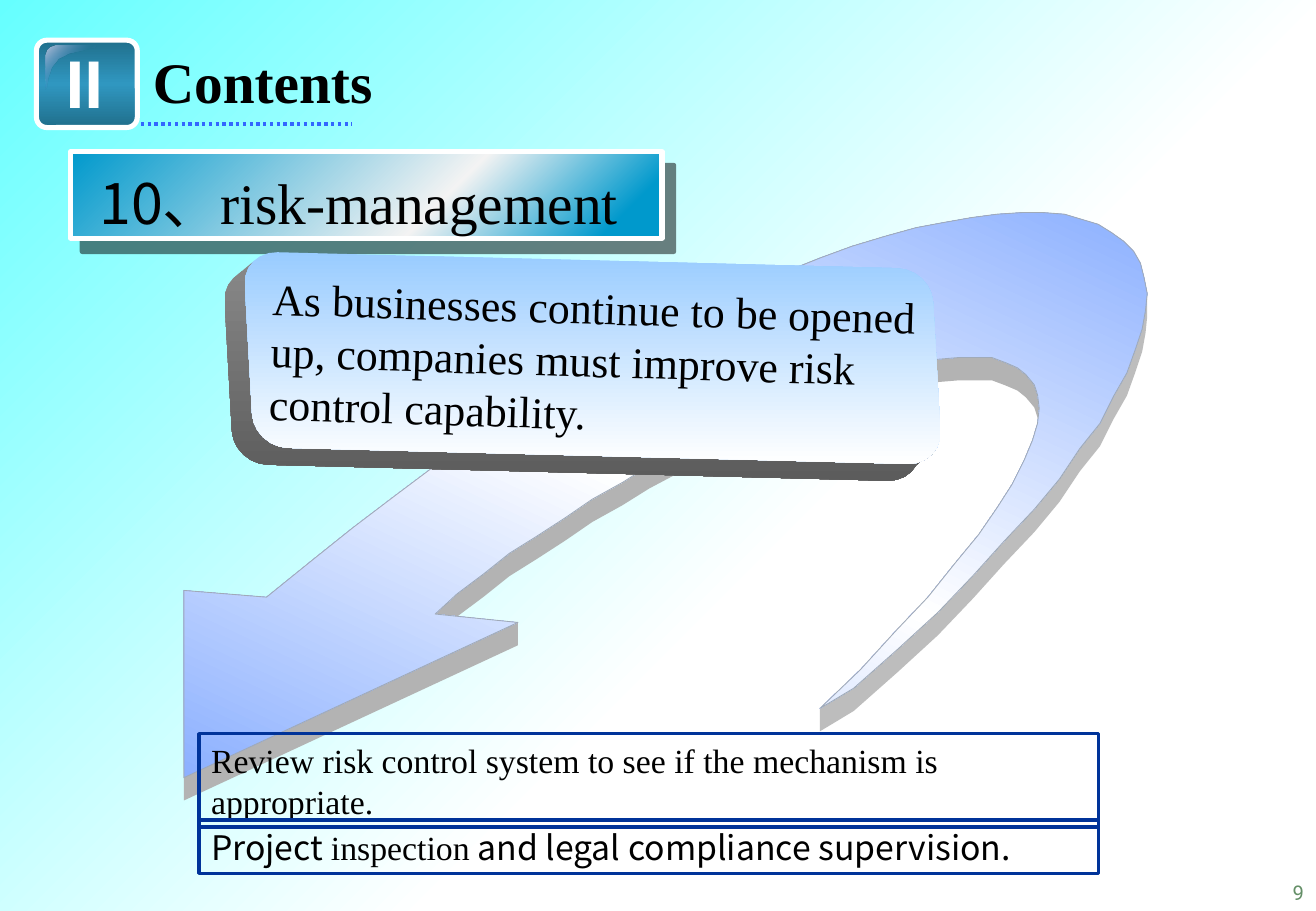
"""Build the risk-management contents slide."""
import math

import lxml.etree
import pptx
import pptx.dml.color
import pptx.enum.dml
import pptx.enum.shapes
import pptx.enum.text
import pptx.oxml.ns
import pptx.util

Pt = pptx.util.Pt
qn = pptx.oxml.ns.qn
SHAPE = pptx.enum.shapes.MSO_SHAPE
ALIGN = pptx.enum.text.PP_ALIGN
SERIF = "Times New Roman"
SANS = "Noto Sans CJK SC"

OUTER = [(486, 420), (506, 408), (532, 385), (556, 363), (577, 341), (595, 321), (613, 302),
         (628, 284), (640, 266), (652, 251), (660, 235), (668, 221), (673, 207), (677, 195),
         (679, 184), (680, 174)]
TOP = [(678, 164), (676, 156), (672, 149), (666, 143), (659, 138), (651, 133), (641, 130),
       (631, 127), (618, 126), (606, 126), (591, 127), (576, 129), (559, 132), (543, 135),
       (525, 140), (505, 146), (486, 153), (466, 161), (445, 169), (423, 179), (401, 190),
       (378, 202), (355, 215), (331, 229), (307, 243), (283, 259), (258, 276), (234, 294),
       (209, 313), (184, 333), (158, 354), (109, 350)]
HEAD = [(109, 461), (307, 369)]
INNER = [(258, 364), (271, 352), (287, 340), (302, 328), (318, 318), (335, 307), (351, 296),
         (369, 286), (385, 276), (402, 267), (420, 258), (436, 251), (454, 243), (469, 237),
         (485, 231), (501, 225), (516, 221), (530, 217), (544, 215), (556, 213), (568, 212),
         (578, 212), (588, 212), (596, 215), (603, 218), (608, 222), (613, 228), (615, 234),
         (616, 242)]
BACK = [(615, 251), (612, 261), (607, 273), (600, 287), (591, 301), (580, 317), (566, 334),
        (550, 354), (531, 374), (510, 397)]
GLOSS = [(33, 27), (30, 28), (28, 30), (27, 33), (27, 53), (28, 52), (29, 46), (31, 40),
         (35, 35), (41, 32), (50, 30), (56, 28.5), (57, 27)]


def rgb(value):
    return pptx.dml.color.RGBColor.from_string(value)


def rounded_card(left, top, across, down, ru, rv):
    points = []
    corners = [(1 - ru, 1 - rv), (ru, 1 - rv), (ru, rv), (1 - ru, rv)]
    for i, (cu, cv) in enumerate(corners):
        for step in range(7):
            a = math.radians(90 * i + 15 * step)
            u, v = cu + ru * math.cos(a), cv + rv * math.sin(a)
            points.append((left + u * across[0] + v * down[0],
                           top + u * across[1] + v * down[1]))
    return points


class Deck:
    def __init__(self, width, height):
        self.prs = pptx.Presentation()
        self.prs.slide_width, self.prs.slide_height = Pt(width), Pt(height)
        self.s = self.prs.slides.add_slide(self.prs.slide_layouts[6])

    def gradient(self, owner, stops, angle):
        owner_fill = self.s.background.fill if owner is self.s else owner.fill
        owner_fill.gradient()
        owner_fill.gradient_angle = (360 - angle) % 360
        gs_lst = owner.element.find(".//" + qn("a:gsLst"))
        for gs in list(gs_lst):
            gs_lst.remove(gs)
        for pos, color, *alpha in stops:
            gs = lxml.etree.SubElement(gs_lst, qn("a:gs"), pos=str(pos * 1000))
            clr = lxml.etree.SubElement(gs, qn("a:srgbClr"), val=color)
            for value in alpha:
                lxml.etree.SubElement(clr, qn("a:alpha"), val=str(value * 1000))

    def style(self, sp, fill, angle, line, weight):
        sp.shadow.inherit = False
        if isinstance(fill, list):
            self.gradient(sp, fill, angle)
        elif fill:
            sp.fill.solid()
            sp.fill.fore_color.rgb = rgb(fill)
        else:
            sp.fill.background()
        if line:
            sp.line.color.rgb = rgb(line)
            sp.line.width = Pt(weight)
        else:
            sp.line.fill.background()
        return sp

    def shape(self, kind, box, fill=None, angle=0, line=None, weight=1, adj=None):
        sp = self.s.shapes.add_shape(kind, *map(Pt, box))
        if adj is not None:
            sp.adjustments[0] = adj
        return self.style(sp, fill, angle, line, weight)

    def outline(self, points, fill, angle=0, line=None, weight=0.5):
        pts = [(Pt(x), Pt(y)) for x, y in points]
        fb = self.s.shapes.build_freeform(*pts[0])
        fb.add_line_segments(pts[1:])
        return self.style(fb.convert_to_shape(), fill, angle, line, weight)

    def side(self, edge, dx, dy, fill, angle=0):
        shifted = [(x + dx, y + dy) for x, y in reversed(edge)]
        return self.outline(edge + shifted, fill, angle)

    def shadow(self, sp, distance, angle, color, alpha):
        effects = sp.element.spPr.find(qn("a:effectLst"))
        node = lxml.etree.SubElement(effects, qn("a:outerShdw"), dist=str(Pt(distance)),
                                     dir=str(angle * 60000), algn="ctr", rotWithShape="0")
        clr = lxml.etree.SubElement(node, qn("a:srgbClr"), val=color)
        lxml.etree.SubElement(clr, qn("a:alpha"), val=str(alpha * 1000))

    def label(self, sp, runs, size, color="000000", bold=False, align=ALIGN.LEFT, wrap=True):
        tf = sp.text_frame
        tf.word_wrap = wrap
        p = tf.paragraphs[0]
        p.alignment = align
        for text, font in runs:
            r = p.add_run()
            r.text = text
            r.font.name, r.font.size, r.font.bold = font, Pt(size), bold
            r.font.color.rgb = rgb(color)
        return p

    def text(self, box, runs, size, rotation=0, **options):
        sp = self.s.shapes.add_textbox(*map(Pt, box))
        sp.rotation = rotation
        return self.label(sp, runs, size, **options)

    def dotted_line(self, x1, x2, y, color, weight):
        cx = self.s.shapes.add_connector(pptx.enum.shapes.MSO_CONNECTOR.STRAIGHT,
                                         Pt(x1), Pt(y), Pt(x2), Pt(y))
        cx.line.color.rgb = rgb(color)
        cx.line.width = Pt(weight)
        cx.line.dash_style = pptx.enum.dml.MSO_LINE.ROUND_DOT
        lxml.etree.SubElement(cx.element.spPr, qn("a:effectLst"))


def main():
    d = Deck(780, 540)
    d.gradient(d.s, [(0, "66FFFF"), (60, "FFFFFF"), (100, "FFFFFF")], 45)

    for edge, gray in ((OUTER, "BDBDBD"), (HEAD, "B3B3B3"), (INNER, "B3B3B3")):
        d.side(edge, 0, 13.5, gray)
    d.outline(OUTER + TOP + HEAD + INNER + BACK,
              [(0, "8CB0FF"), (50, "FFFFFF"), (100, "8CB0FF")], 115, "A0AAB8")

    d.text((715, 518.4, 65, 19.4), [("9", "Roboto")], 12, color="648F67", align=ALIGN.RIGHT)

    d.shape(SHAPE.ROUNDED_RECTANGLE, (21.6, 23.8, 59.8, 51.8),
            [(0, "206F8C"), (50, "3097C0"), (100, "206F8C")], 90, "FFFFFF", 3, 0.12)
    d.outline(GLOSS, [(0, "BBC7DE"), (50, "4F81BD", 0), (100, "BBC7DE")], 45)
    d.text((31.7, 20.9, 36.7, 55.4), [("II", "Arial")], 40, color="FFFFFF", bold=True,
           align=ALIGN.CENTER, wrap=False)
    d.dotted_line(83.5, 208.8, 73.4, "3366FF", 2)
    d.text((83.5, 24, 193, 48), [("Contents", SERIF)], 34, bold=True)

    bar = d.shape(SHAPE.ROUNDED_RECTANGLE, (41.8, 90, 350.6, 51.1),
                  [(0, "0099CC"), (62, "F3F3F3"), (91, "0099CC"), (100, "0099CC")],
                  45, "FFFFFF", 3, 0)
    d.shadow(bar, 10.6, 49, "000000", 50)
    p = d.text((51.8, 76.3, 406, 67.7), [("10、", SANS), ("risk-management", SERIF)], 34)
    p.line_spacing = Pt(60)

    card = rounded_card(144, 149, (408, 10.5), (6.5, 116), 0.05, 0.17)
    d.side(card[2:18], -12, 10, [(0, "888888"), (100, "5C5C5C")], 90)
    d.outline(card, [(0, "99CCFF"), (100, "FFFFFF")], 90)
    d.text((153.4, 163.4, 404.6, 101.5),
           [("As businesses continue to be opened up, companies must improve risk "
             "control capability.", SERIF)], 26, rotation=1.8)

    notes = [
        (434.9, 55.4, [("Review risk control system to see if the mechanism is appropriate.",
                        SERIF)]),
        (486, 31.7, [("Project ", SANS), ("inspection", SERIF),
                     (" and legal compliance supervision.", SANS)]),
    ]
    for top, height, runs in notes:
        sp = d.shape(SHAPE.RECTANGLE, (118, top, 533, height), line="003399", weight=2)
        d.label(sp, runs, 20)

    d.prs.save("out.pptx")


if __name__ == "__main__":
    main()
